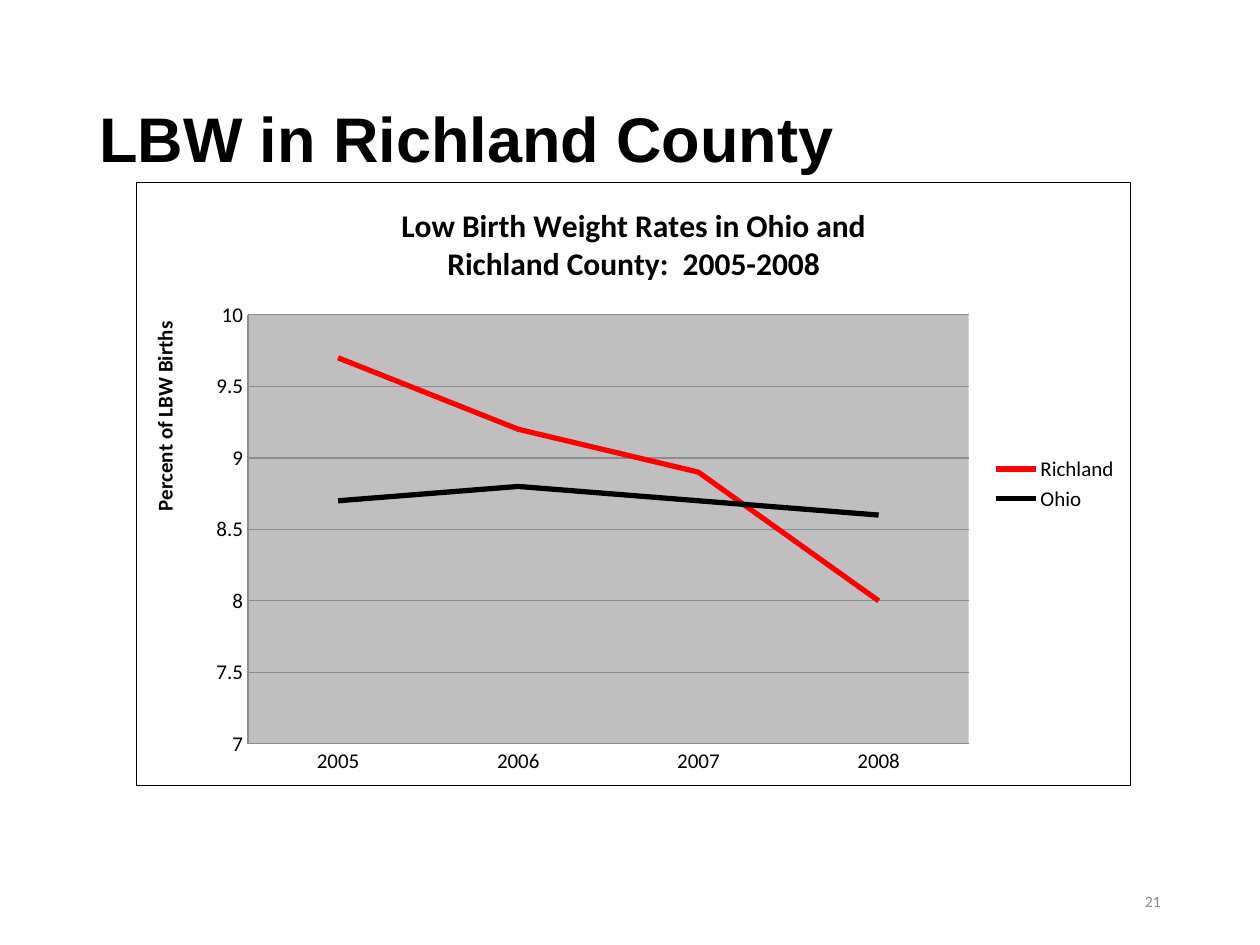
import pptx
import pptx.chart.data
import pptx.dml.color
import pptx.enum.chart
import pptx.enum.text
import pptx.oxml
import pptx.oxml.ns
import pptx.util

Cm = pptx.util.Cm
Pt = pptx.util.Pt
BLACK = pptx.dml.color.RGBColor(0, 0, 0)
RED = pptx.dml.color.RGBColor(255, 0, 0)
GRAY = pptx.dml.color.RGBColor(140, 140, 140)
SILVER = pptx.dml.color.RGBColor(191, 191, 191)
ALIGN = pptx.enum.text.PP_ALIGN
YEARS = ["2005", "2006", "2007", "2008"]
RATES = [
    ("Richland", [9.7, 9.2, 8.9, 8.0], RED),
    ("Ohio", [8.7, 8.8, 8.7, 8.6], BLACK),
]


class SlideBuilder:
    heading_font = "Arial"
    body_font = "Calibri"

    def __init__(self, presentation):
        self.slide = presentation.slides.add_slide(presentation.slide_layouts[6])

    def style(self, font, size, color=BLACK, bold=False, name=body_font):
        font.name = name
        font.size = Pt(size)
        font.bold = bold
        font.color.rgb = color

    def text(self, box, words, alignment, spacing=1.0, **look):
        frame = self.slide.shapes.add_textbox(*map(Cm, box)).text_frame
        frame.word_wrap = True
        frame.vertical_anchor = pptx.enum.text.MSO_ANCHOR.MIDDLE
        paragraph = frame.paragraphs[0]
        paragraph.alignment = alignment
        paragraph.line_spacing = spacing
        run = paragraph.add_run()
        run.text = words
        self.style(run.font, **look)

    def chart_heading(self, frame, lines, size):
        for index, line in enumerate(lines):
            paragraph = frame.add_paragraph() if index else frame.paragraphs[0]
            run = paragraph.add_run()
            run.text = line
            self.style(run.font, size, bold=True)

    def layout(self, parent, position, **values):
        namespace = pptx.oxml.ns.nsdecls("c")
        settings = "".join(f'<c:{key} val="{value}"/>' for key, value in values.items())
        existing = parent.find(pptx.oxml.ns.qn("c:layout"))
        if existing is not None:
            parent.remove(existing)
        parent.insert(position, pptx.oxml.parse_xml(
            f"<c:layout {namespace}><c:manualLayout>{settings}</c:manualLayout></c:layout>"))

    def area(self, fill, border=""):
        return pptx.oxml.parse_xml(
            f'<c:spPr {pptx.oxml.ns.nsdecls("c", "a")}><a:solidFill><a:srgbClr val="{fill}"/>'
            f"</a:solidFill>{border}</c:spPr>")

    def line_chart(self, box, title_lines, axis_title, categories, rates):
        data = pptx.chart.data.CategoryChartData()
        data.categories = categories
        for name, values, color in rates:
            data.add_series(name, values)
        chart = self.slide.shapes.add_chart(
            pptx.enum.chart.XL_CHART_TYPE.LINE, *map(Cm, box), data).chart
        self.style(chart.font, 12)
        chart.has_title = True
        self.chart_heading(chart.chart_title.text_frame, title_lines, 18)
        chart.has_legend = True
        chart.legend.position = pptx.enum.chart.XL_LEGEND_POSITION.RIGHT
        chart.legend.include_in_layout = False
        for series, (name, values, color) in zip(chart.plots[0].series, rates):
            series.smooth = False
            series.format.line.color.rgb = color
            series.format.line.width = Pt(3)
        self.axes(chart, axis_title)
        space = chart._chartSpace
        chart_element = space.find(pptx.oxml.ns.qn("c:chart"))
        plot_area = chart_element.find(pptx.oxml.ns.qn("c:plotArea"))
        self.layout(plot_area, 0, layoutTarget="inner", xMode="edge", yMode="edge",
                    x=0.112, y=0.22, w=0.725, h=0.711)
        plot_area.append(self.area(SILVER))
        border = (f'<a:ln w="{Pt(0.75)}"><a:solidFill><a:srgbClr val="{BLACK}"/>'
                  "</a:solidFill></a:ln>")
        chart_element.addnext(self.area("FFFFFF", border))

    def axes(self, chart, axis_title):
        value_axis = chart.value_axis
        value_axis.minimum_scale = 7
        value_axis.maximum_scale = 10
        value_axis.major_unit = 0.5
        value_axis.has_major_gridlines = True
        value_axis.major_gridlines.format.line.color.rgb = GRAY
        for axis in (chart.category_axis, value_axis):
            axis.major_tick_mark = pptx.enum.chart.XL_TICK_MARK.NONE
            axis.format.line.color.rgb = GRAY
        frame = value_axis.axis_title.text_frame
        self.chart_heading(frame, [axis_title], 12)
        frame._txBody.bodyPr.set("rot", "-5400000")
        frame._txBody.bodyPr.set("vert", "horz")
        self.layout(value_axis.axis_title._element, 1, xMode="edge", yMode="edge",
                    x=0.01, y=0.225)


def main():
    presentation = pptx.Presentation()
    presentation.slide_width = Cm(25.4)
    presentation.slide_height = Cm(19.05)
    builder = SlideBuilder(presentation)
    builder.text((1.75, 1.02, 21.9, 3.68), "LBW in Richland County", ALIGN.LEFT,
                 spacing=0.9, size=36, bold=True, name=builder.heading_font)
    builder.text((17.93, 17.65, 5.72, 1.02), "21", ALIGN.RIGHT, size=9, color=GRAY)
    builder.line_chart(
        (2.74, 3.66, 20.07, 12.19),
        ["Low Birth Weight Rates in Ohio and", "Richland County:  2005-2008"],
        "Percent of LBW Births", YEARS, RATES)
    presentation.save("out.pptx")


if __name__ == "__main__":
    main()
